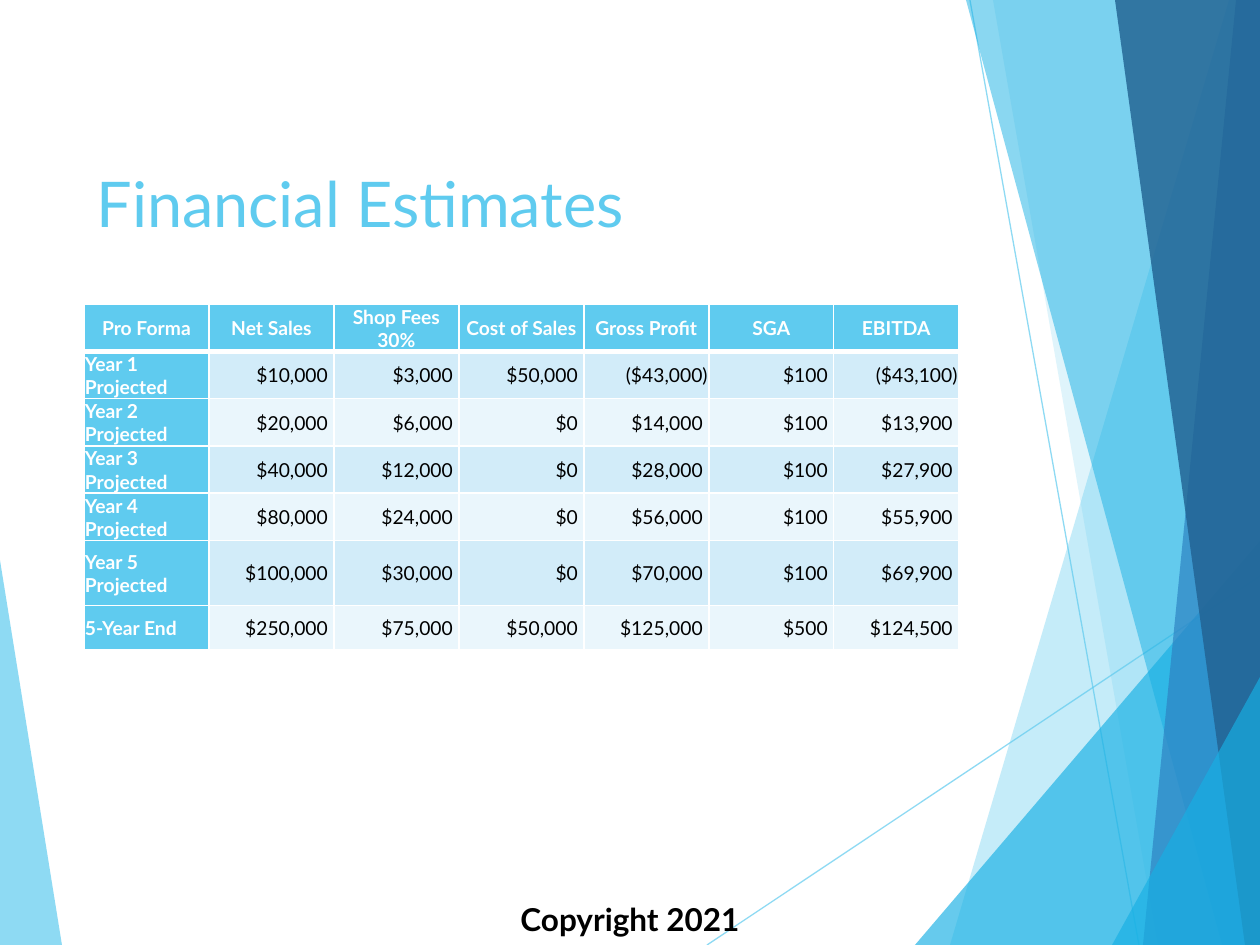
from dataclasses import dataclass

from lxml import etree
from pptx import Presentation
from pptx import util as u
from pptx.dml.color import RGBColor
from pptx.enum import shapes, text
from pptx.oxml.ns import qn

EMU_PER_PX = 914400 / 126
WIDTH, HEIGHT = 1260, 945
FONT = "Lato"

WHITE = RGBColor(0xFF, 0xFF, 0xFF)
BLACK = RGBColor(0x00, 0x00, 0x00)
SKY = RGBColor(0x5F, 0xCB, 0xEF)
CYAN = RGBColor(0x17, 0xB0, 0xE4)
BLUE = RGBColor(0x2E, 0x83, 0xC3)
NAVY = RGBColor(0x22, 0x62, 0x92)
BANDS = (RGBColor(0xD2, 0xEC, 0xF9), RGBColor(0xEA, 0xF6, 0xFC))


@dataclass(frozen=True)
class Facet:
    points: tuple[tuple[int, int], ...]
    color: RGBColor
    opacity: int


@dataclass(frozen=True)
class Ray:
    start: tuple[int, int]
    end: tuple[int, int]


LEFT_FACET = Facet(((0, 560), (62, HEIGHT), (0, HEIGHT)), SKY, 70)
RAYS = (Ray((707, HEIGHT), (WIDTH, 576)), Ray((970, 0), (1139, HEIGHT)))
RIGHT_FACETS = (
    Facet(((1229, 0), (950, HEIGHT), (WIDTH, HEIGHT), (WIDTH, 0)), SKY, 36),
    Facet(((993, 0), (1158, HEIGHT), (WIDTH, HEIGHT), (WIDTH, 0)), SKY, 20),
    Facet(((915, HEIGHT), (WIDTH, 541), (WIDTH, HEIGHT)), CYAN, 66),
    Facet(((966, 0), (1222, HEIGHT), (WIDTH, HEIGHT), (WIDTH, 0)), CYAN, 50),
    Facet(((1236, 0), (1143, HEIGHT), (WIDTH, HEIGHT), (WIDTH, 0)), BLUE, 70),
    Facet(((1115, 0), (1245, HEIGHT), (WIDTH, HEIGHT), (WIDTH, 0)), NAVY, 82),
    Facet(((1112, HEIGHT), (WIDTH, 677), (WIDTH, HEIGHT)), CYAN, 66),
)

HEADINGS = ("Pro Forma", "Net Sales", "Shop Fees 30%", "Cost of Sales",
            "Gross Profit", "SGA", "EBITDA")
ESTIMATES = (
    ("Year 1 Projected", 10000, 3000, 50000, -43000, 100, -43100),
    ("Year 2 Projected", 20000, 6000, 0, 14000, 100, 13900),
    ("Year 3 Projected", 40000, 12000, 0, 28000, 100, 27900),
    ("Year 4 Projected", 80000, 24000, 0, 56000, 100, 55900),
    ("Year 5 Projected", 100000, 30000, 0, 70000, 100, 69900),
    ("5-Year End", 250000, 75000, 50000, 125000, 500, 124500),
)
ROW_HEIGHTS = (46, 47, 47, 47, 47, 65, 44)
COLUMN_WIDTH = 125


def px(length: int) -> u.Emu:
    return u.Emu(round(length * EMU_PER_PX))


def set_opacity(color_parent, percent: int) -> None:
    color = next(color_parent.iter(qn("a:srgbClr")))
    etree.SubElement(color, qn("a:alpha"), val=str(percent * 1000))


def draw_facet(page, facet: Facet) -> None:
    builder = page.shapes.build_freeform(*facet.points[0], scale=EMU_PER_PX)
    builder.add_line_segments(facet.points[1:], close=True)
    shape = builder.convert_to_shape()
    shape.shadow.inherit = False
    shape.fill.solid()
    shape.fill.fore_color.rgb = facet.color
    set_opacity(shape.element.spPr, facet.opacity)
    shape.line.fill.background()


def draw_ray(page, ray: Ray) -> None:
    line = page.shapes.add_connector(
        shapes.MSO_CONNECTOR.STRAIGHT, *map(px, ray.start + ray.end))
    line.line.color.rgb = SKY
    line.line.width = u.Pt(0.75)
    set_opacity(line.element.spPr, 70)
    etree.SubElement(line.element.spPr, qn("a:effectLst"))


def write(frame, wording: str, size: int, color: RGBColor,
          align: text.PP_ALIGN, bold: bool = False) -> None:
    frame.text = wording
    para = frame.paragraphs[0]
    para.alignment = align
    font = para.font
    font.name, font.size, font.bold = FONT, u.Pt(size), bold
    font.color.rgb = color


def place_title(page) -> None:
    title = page.shapes.title
    title.left, title.top, title.width, title.height = map(px, (84, 158, 875, 108))
    title.text_frame.vertical_anchor = text.MSO_ANCHOR.TOP
    title.text_frame.auto_size = text.MSO_AUTO_SIZE.NONE
    write(title.text_frame, "Financial Estimates", 36, SKY, text.PP_ALIGN.LEFT)
    # Bring the title in front of the facets.
    title.element.getparent().append(title.element)


def add_copyright(page) -> None:
    box = page.shapes.add_textbox(px(0), px(894), px(WIDTH), px(50))
    box.text_frame.word_wrap = True
    box.text_frame.auto_size = text.MSO_AUTO_SIZE.SHAPE_TO_FIT_TEXT
    write(box.text_frame, "Copyright 2021", 18, BLACK, text.PP_ALIGN.CENTER, True)


def accounting(value: int) -> str:
    """Format dollars, with a space standing under the closing bracket."""
    return f"(${-value:,})" if value < 0 else f"${value:,} "


def set_borders(cell, top: int, bottom: int) -> None:
    """Draw white borders; top and bottom are in points, the sides are 1 pt."""
    properties = cell._tc.get_or_add_tcPr()
    for side, points in (("L", 1), ("R", 1), ("T", top), ("B", bottom)):
        border = etree.SubElement(properties, qn(f"a:ln{side}"), w=str(u.Pt(points)))
        fill = etree.SubElement(border, qn("a:solidFill"))
        etree.SubElement(fill, qn("a:srgbClr"), val=str(WHITE))


def fill_cell(cell, row: int, column: int, value: str | int) -> None:
    is_label = row == 0 or column == 0
    set_borders(cell, 3 if row == 1 else 1, 3 if row == 0 else 1)
    cell.fill.solid()
    cell.fill.fore_color.rgb = SKY if is_label else BANDS[(row - 1) % 2]
    cell.margin_left = cell.margin_right = cell.margin_top = px(1)
    cell.margin_bottom = 0
    cell.vertical_anchor = text.MSO_ANCHOR.MIDDLE
    if row == 0:
        align = text.PP_ALIGN.CENTER
    else:
        align = text.PP_ALIGN.LEFT if column == 0 else text.PP_ALIGN.RIGHT
    wording = value if isinstance(value, str) else accounting(value)
    write(cell.text_frame, wording, 11, WHITE if is_label else BLACK, align, is_label)


def add_estimates(page) -> None:
    rows = (HEADINGS, *ESTIMATES)
    table = page.shapes.add_table(
        len(rows), len(HEADINGS), px(84), px(304),
        px(COLUMN_WIDTH * len(HEADINGS)), px(sum(ROW_HEIGHTS))).table
    table.first_col = True
    for column in table.columns:
        column.width = px(COLUMN_WIDTH)
    for row, (values, height) in enumerate(zip(rows, ROW_HEIGHTS)):
        table.rows[row].height = px(height)
        for column, value in enumerate(values):
            fill_cell(table.cell(row, column), row, column, value)


def main() -> None:
    deck = Presentation()
    deck.slide_width, deck.slide_height = px(WIDTH), px(HEIGHT)
    page = deck.slides.add_slide(deck.slide_layouts.get_by_name("Title Only"))
    draw_facet(page, LEFT_FACET)
    for ray in RAYS:
        draw_ray(page, ray)
    for facet in RIGHT_FACETS:
        draw_facet(page, facet)
    place_title(page)
    add_copyright(page)
    add_estimates(page)
    deck.save("out.pptx")


if __name__ == "__main__":
    main()
